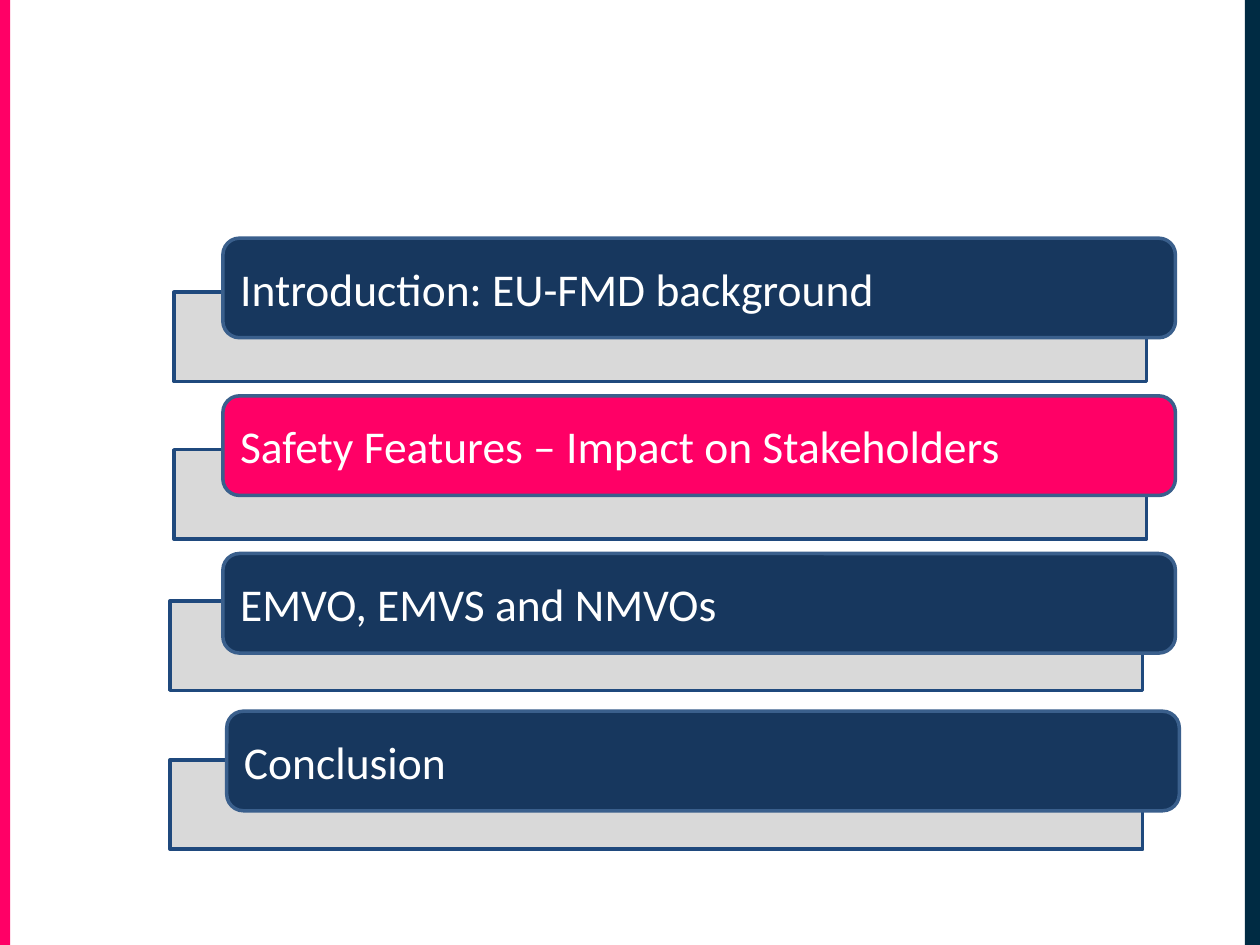
import pptx
import pptx.dml.color
import pptx.enum.shapes
import pptx.enum.text
import pptx.util

Pt = pptx.util.Pt
SHAPES = pptx.enum.shapes.MSO_SHAPE
COLORS = {
    "pink": "FF0066",
    "edge": "002B43",
    "navy": "17375E",
    "card_line": "3A5F8C",
    "grey": "D9D9D9",
    "bar_line": "1F497D",
    "white": "FFFFFF",
}
AGENDA = [
    ("Introduction: EU-FMD background", "navy", 127.4, 99.4, 167),
    ("Safety Features – Impact on Stakeholders", "pink", 127.4, 99.4, 257),
    ("EMVO, EMVS and NMVOs", "navy", 127.4, 97.2, 343.4),
    ("Conclusion", "navy", 129.6, 97.2, 434.2),
]
CARD_TOP, CARD_PITCH = 136.1, 90.1


class AgendaSlide:
    """Draws the agenda elements on one slide in a shared style."""

    def __init__(self, slide):
        self.slide = slide
        self.font_name = "Calibri"
        self.font_size = 26
        self.line_width = 2

    def color(self, name):
        return pptx.dml.color.RGBColor.from_string(COLORS[name])

    def block(self, kind, left, top, width, height, fill, line=None):
        shape = self.slide.shapes.add_shape(
            kind, Pt(left), Pt(top), Pt(width), Pt(height)
        )
        shape.shadow.inherit = False
        shape.fill.solid()
        shape.fill.fore_color.rgb = self.color(fill)
        if line:
            shape.line.color.rgb = self.color(line)
            shape.line.width = Pt(self.line_width)
        else:
            shape.line.fill.background()
        return shape

    def edge(self, left, width, fill):
        self.block(SHAPES.RECTANGLE, left, 0, width, 540, fill)

    def bar(self, left, top):
        self.block(SHAPES.RECTANGLE, left, top, 555.8, 51.1, "grey", "bar_line")

    def card(self, left, top, text, fill):
        card = self.block(
            SHAPES.ROUNDED_RECTANGLE, left, top, 544.3, 56.9, fill, "card_line"
        )
        frame = card.text_frame
        frame.text = text
        frame.word_wrap = True
        frame.vertical_anchor = pptx.enum.text.MSO_ANCHOR.MIDDLE
        para = frame.paragraphs[0]
        para.alignment = pptx.enum.text.PP_ALIGN.LEFT
        font = para.runs[0].font
        font.name = self.font_name
        font.size = Pt(self.font_size)
        font.color.rgb = self.color("white")


def main():
    deck = pptx.Presentation()
    deck.slide_width, deck.slide_height = Pt(720), Pt(540)
    page = AgendaSlide(deck.slides.add_slide(deck.slide_layouts[6]))
    page.edge(0, 5.8, "pink")
    page.edge(711.4, 8.6, "edge")
    for index, (text, fill, card_left, bar_left, bar_top) in enumerate(AGENDA):
        page.bar(bar_left, bar_top)
        page.card(card_left, CARD_TOP + index * CARD_PITCH, text, fill)
    deck.save("out.pptx")


if __name__ == "__main__":
    main()
